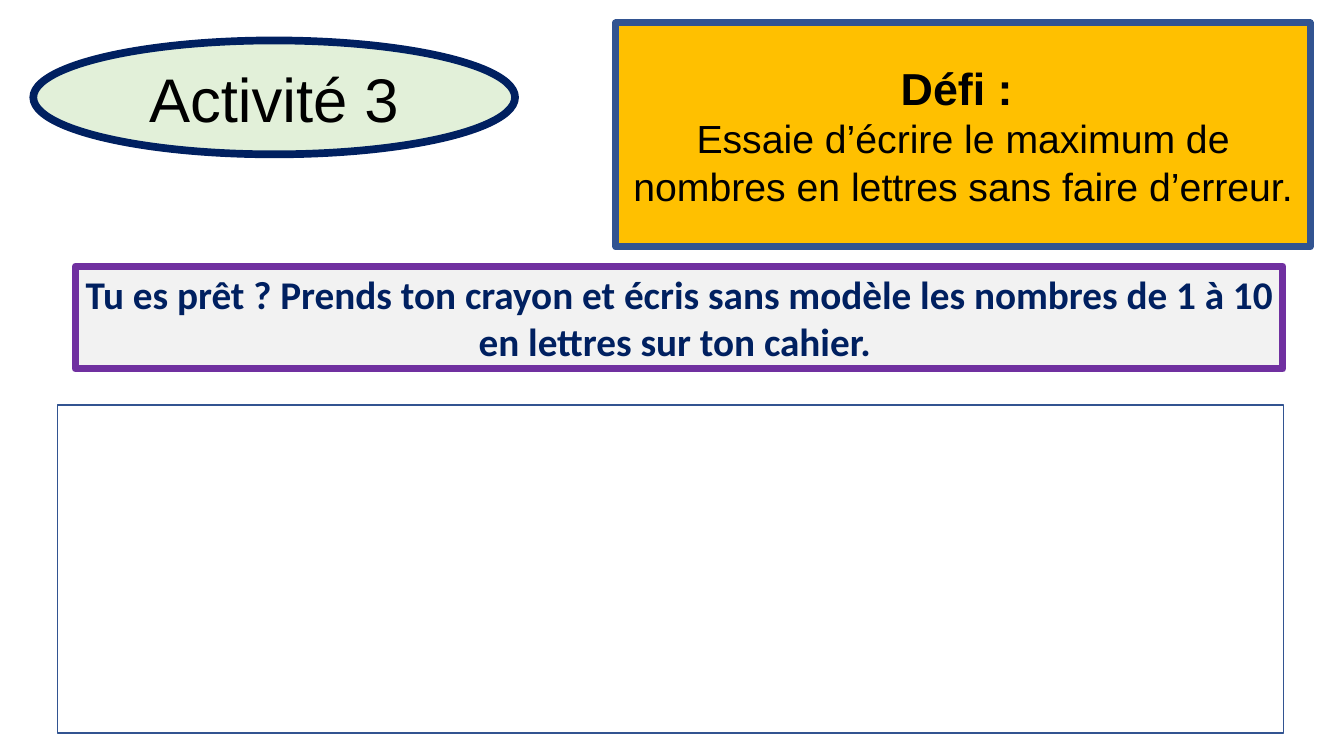
import pptx
import pptx.util
import pptx.dml.color
import pptx.enum.shapes
import pptx.enum.text

Cm = pptx.util.Cm
SHAPE = pptx.enum.shapes.MSO_SHAPE
COLORS = {
    "black": "000000",
    "white": "FFFFFF",
    "navy": "002060",
    "blue": "325491",
    "purple": "7030A0",
    "green": "E2F0D9",
    "gold": "FFC000",
    "grey": "F2F2F2",
}


def rgb(name):
    """Return the named colour."""
    return pptx.dml.color.RGBColor.from_string(COLORS[name])


def add_box(s, box, fill, line, width, kind=SHAPE.RECTANGLE):
    """Add a filled, outlined shape in box (left, top, width, height in cm)."""
    sp = s.shapes.add_shape(kind, *(Cm(v) for v in box))
    sp.shadow.inherit = False
    sp.fill.solid()
    sp.fill.fore_color.rgb = rgb(fill)
    sp.line.color.rgb = rgb(line)
    sp.line.width = pptx.util.Pt(width)
    tf = sp.text_frame
    tf.word_wrap = True
    tf.vertical_anchor = pptx.enum.text.MSO_ANCHOR.MIDDLE
    tf.margin_left = tf.margin_right = Cm(0.2)
    return sp


def write(p, text, size, font="Arial", color="black", bold=False):
    """Write centred, formatted text in a paragraph."""
    p.alignment = pptx.enum.text.PP_ALIGN.CENTER
    r = p.add_run()
    r.text = text
    r.font.size = pptx.util.Pt(size)
    r.font.name = font
    r.font.bold = bold
    r.font.color.rgb = rgb(color)


def add_title(s, box):
    """Add the activity title in an ellipse."""
    sp = add_box(s, box, "green", "navy", 5.5, SHAPE.OVAL)
    write(sp.text_frame.paragraphs[0], "Activité 3", 44)


def add_challenge(s, box):
    """Add the challenge panel with its heading and text."""
    tf = add_box(s, box, "gold", "blue", 5).text_frame
    write(tf.paragraphs[0], "Défi : ", 32, bold=True)
    write(tf.add_paragraph(),
          "Essaie d’écrire le maximum de nombres en lettres sans faire d’erreur.", 28)


def add_instruction(s, box):
    """Add the instruction banner."""
    sp = add_box(s, box, "grey", "purple", 5)
    write(sp.text_frame.paragraphs[0],
          "Tu es prêt ? Prends ton crayon et écris sans modèle les nombres "
          "de 1 à 10 en lettres sur ton cahier. ",
          28, font="Calibri", color="navy", bold=True)


def add_answer_area(s, box):
    """Add the empty answer frame."""
    add_box(s, box, "white", "blue", 1)


def main():
    """Build and save the activity slide."""
    prs = pptx.Presentation()
    prs.slide_width, prs.slide_height = Cm(33.87), Cm(19.05)
    s = prs.slides.add_slide(prs.slide_layouts[6])
    add_title(s, (0.84, 1.02, 12.14, 2.87))
    add_challenge(s, (15.52, 0.58, 17.5, 5.64))
    add_instruction(s, (1.9, 6.71, 30.43, 2.59))
    add_answer_area(s, (1.45, 10.21, 30.89, 8.26))
    prs.save("out.pptx")


if __name__ == "__main__":
    main()
